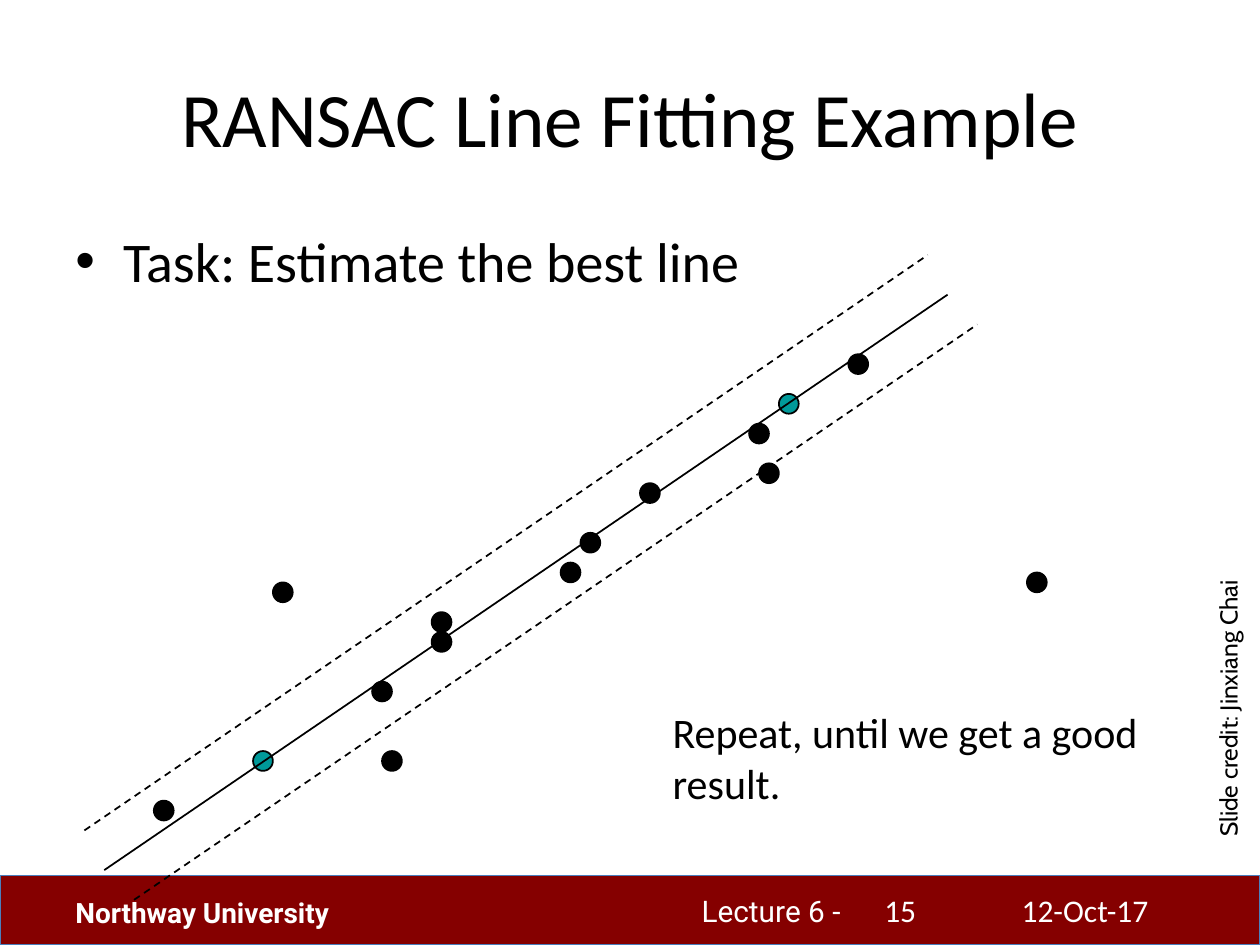
"""Build the slide on fitting a line with RANSAC."""
import dataclasses

import pptx
import pptx.dml.color
import pptx.enum.dml
import pptx.enum.shapes
import pptx.enum.text
import pptx.oxml
import pptx.oxml.ns
import pptx.util

Inches = pptx.util.Inches
Pt = pptx.util.Pt


@dataclasses.dataclass(frozen=True)
class Theme:
    """Hold colours, fonts and type sizes."""
    ink: str = "000000"
    paper: str = "FFFFFF"
    bar: str = "850000"
    bar_edge: str = "4B7EBC"
    sample: str = "009999"
    main_font: str = "Calibri"
    footer_font: str = "Roboto"
    credit_font: str = "Cabin"
    title: int = 44
    task: int = 32
    caption: int = 24
    number: int = 18
    lecture: int = 17
    school: int = 16
    credit: int = 14


THEME = Theme()
PITCH = pptx.util.Cm(0.2)
ORIGIN = (Inches(1.3), Inches(2.89))
POINTS = [(61, 11), (41, 21), (28, 28), (49, 13), (60, 7), (43, 18), (12, 23),
          (0, 45), (70, 0), (22, 33), (28, 26), (23, 40), (88, 22)]
SAMPLES = [(63, 4), (10, 40)]
LINE_START, LINE_END = (-6, 51), (79, -7)
BAND_SHIFTS = [(3, 3), (-2, -4)]


def colour(code):
    """Turn a hex code into a colour."""
    return pptx.dml.color.RGBColor.from_string(code)


def on_plot(column, row):
    """Place a plot grid position on the slide."""
    return ORIGIN[0] + column * PITCH, ORIGIN[1] + row * PITCH


def style_text(frame, size, font, ink, bold=False):
    """Format every run of a text frame."""
    for para in frame.paragraphs:
        for span in para.runs:
            span.font.size = Pt(size)
            span.font.name = font
            span.font.bold = bold
            span.font.color.rgb = colour(ink)


def add_label(page, text, place, size, font=THEME.main_font, ink=THEME.ink, bold=False):
    """Add a wrapped text box and return it."""
    box = page.shapes.add_textbox(*map(Inches, place))
    box.text_frame.word_wrap = True
    box.text_frame.text = text
    style_text(box.text_frame, size, font, ink, bold)
    return box


def add_solid(shapes, kind, place, fill, edge, width):
    """Add a filled and outlined preset shape."""
    shape = shapes.add_shape(kind, *place)
    shape.shadow.inherit = False
    shape.fill.solid()
    shape.fill.fore_color.rgb = colour(fill)
    shape.line.color.rgb = colour(edge)
    shape.line.width = Pt(width)


def add_dots(shapes, positions, fill):
    """Add one dot, two grid steps wide, at each position."""
    for column, row in positions:
        left, top = on_plot(column - 1, row - 1)
        add_solid(shapes, pptx.enum.shapes.MSO_SHAPE.OVAL,
                  (left, top, 2 * PITCH, 2 * PITCH), fill, THEME.ink, 1)


def add_fit_line(page, shift=(0, 0), dashed=False):
    """Add the fitted line, moved by a shift in grid steps."""
    ends = [on_plot(column + shift[0], row + shift[1])
            for column, row in (LINE_START, LINE_END)]
    line = page.shapes.add_connector(pptx.enum.shapes.MSO_CONNECTOR.STRAIGHT,
                                     *ends[0], *ends[1])
    line.line.color.rgb = colour(THEME.ink)
    line.line.width = Pt(1)
    if dashed:
        line.line.dash_style = pptx.enum.dml.MSO_LINE.DASH
    line._element.spPr.append(pptx.oxml.parse_xml(
        "<a:effectLst %s/>" % pptx.oxml.ns.nsdecls("a")))


def add_bullet(para, indent):
    """Give a paragraph a round bullet with a hanging indent."""
    properties = para._p.get_or_add_pPr()
    properties.set("marL", str(Inches(indent)))
    properties.set("indent", str(-Inches(indent)))
    properties.append(pptx.oxml.parse_xml(
        '<a:buFont %s typeface="Arial"/>' % pptx.oxml.ns.nsdecls("a")))
    properties.append(pptx.oxml.parse_xml(
        '<a:buChar %s char="•"/>' % pptx.oxml.ns.nsdecls("a")))


def add_title(page, text):
    """Fill and place the title placeholder."""
    title = page.shapes.title
    title.left, title.top, title.width, title.height = map(Inches, (0.5, 0.3, 9, 1.25))
    title.text_frame.text = text
    title.text_frame.vertical_anchor = pptx.enum.text.MSO_ANCHOR.MIDDLE
    title.text_frame.paragraphs[0].alignment = pptx.enum.text.PP_ALIGN.CENTER
    style_text(title.text_frame, THEME.title, THEME.main_font, THEME.ink)


def add_footer(page):
    """Add the coloured bar and its labels."""
    add_solid(page.shapes, pptx.enum.shapes.MSO_SHAPE.RECTANGLE,
              map(Inches, (0, 6.95, 10, 0.55)), THEME.bar, THEME.bar_edge, 0.75)
    add_label(page, "Lecture 6 -", (5.47, 7.04, 2.44, 0.4),
              THEME.lecture, THEME.footer_font, THEME.paper)
    add_label(page, "Northway University", (0.5, 7.06, 2.67, 0.37),
              THEME.school, THEME.footer_font, THEME.paper, True)
    add_label(page, "12-Oct-17", (8.01, 7.02, 1.74, 0.4), THEME.number, ink=THEME.paper)
    add_label(page, "15", (6.92, 7.02, 1.1, 0.4), THEME.number, ink=THEME.paper)


def add_plot(page):
    """Add the data points, the sampled pair and the fitted band."""
    add_dots(page.shapes.add_group_shape().shapes, POINTS, THEME.ink)
    add_dots(page.shapes, SAMPLES, THEME.sample)
    add_fit_line(page)
    for shift in BAND_SHIFTS:
        add_fit_line(page, shift, dashed=True)


def main():
    """Build and save the deck."""
    deck = pptx.Presentation()
    deck.slide_width, deck.slide_height = Inches(10), Inches(7.5)
    page = deck.slides.add_slide(deck.slide_layouts.get_by_name("Title Only"))
    add_footer(page)
    add_title(page, "RANSAC Line Fitting Example")
    task = add_label(page, "Task: Estimate the best line", (0.5, 1.75, 9, 4.95), THEME.task)
    caption = add_label(page, "Repeat, until we get a good result.",
                        (5.24, 5.56, 4.25, 1.18), THEME.caption)
    for box, size in ((task, THEME.task), (caption, THEME.caption)):
        box.text_frame.paragraphs[0].space_before = Pt(round(size * 0.2))
    add_bullet(task.text_frame.paragraphs[0], 0.38)
    add_plot(page)
    credit = add_label(page, "Slide credit: Jinxiang Chai", (8.5, 5.32, 2.5, 0.34),
                       THEME.credit, THEME.credit_font)
    credit.rotation = 270
    deck.save("out.pptx")


if __name__ == "__main__":
    main()
